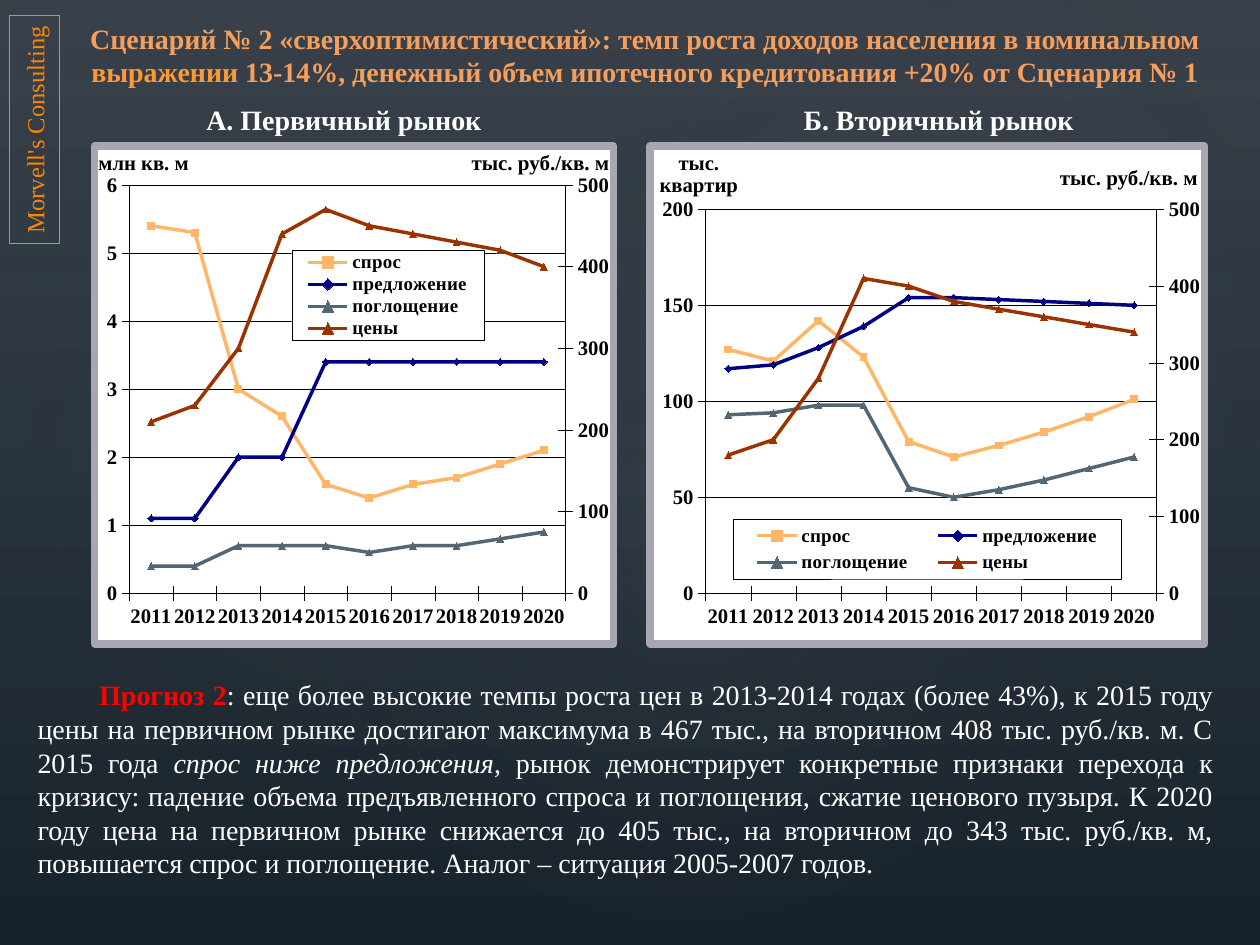
from copy import deepcopy

from pptx import Presentation
from pptx.chart.axis import ValueAxis
from pptx.chart.data import CategoryChartData
from pptx.dml.color import RGBColor
from pptx.enum.chart import XL_CHART_TYPE, XL_LEGEND_POSITION, XL_MARKER_STYLE, XL_TICK_MARK
from pptx.enum.shapes import MSO_SHAPE
from pptx.enum.text import MSO_ANCHOR, PP_ALIGN
from pptx.oxml import parse_xml
from pptx.oxml.ns import nsdecls, qn
from pptx.util import Inches, Pt

COLORS = {
    "top": "394650", "bottom": "17212A", "veil": "38363E", "dark": "283138", "glow": "A8A6B2",
    "title": "F69E5C", "accent": "FF9933", "brand": "FF8600", "red": "FF0000",
    "white": "FFFFFF", "black": "000000", "demand": "FFB666", "supply": "000080",
    "absorption": "536674", "prices": "993300", "price marker": "800000",
}
FONT = "Times New Roman"


def rgb(name):
    return RGBColor.from_string(COLORS[name])


def set_layout(element, position, plot=False):
    """Give a chart part a manual layout: x, y and, if present, width, height."""
    for old in element.findall(qn("c:layout")):
        element.remove(old)
    tags = ["xMode", "yMode"] + ["x", "y", "w", "h"][:len(position)]
    values = ["edge", "edge", *position]
    inner = '<c:layoutTarget val="inner"/>' if plot else ""
    inner += "".join(f'<c:{tag} val="{value}"/>' for tag, value in zip(tags, values))
    layout = parse_xml(f'<c:layout {nsdecls("c")}><c:manualLayout>{inner}</c:manualLayout></c:layout>')
    leading = element.xpath("c:tx | c:legendPos")
    element.insert(len(leading), layout)


deck = Presentation()
deck.slide_width, deck.slide_height = Inches(10), Inches(7.5)
page = deck.slides.add_slide(deck.slide_layouts[6])

# Background with a veil and three soft glows
backdrop = page.background.fill
backdrop.gradient()
backdrop.gradient_angle = 270
for stop, name in zip(backdrop.gradient_stops, ("top", "bottom")):
    stop.color.rgb = rgb(name)

down = '<a:lin ang="5400000" scaled="0"/>'
radial = '<a:path path="circle"><a:fillToRect l="50000" t="50000" r="50000" b="50000"/></a:path>'
layers = [
    (MSO_SHAPE.RECTANGLE, (0, 0, 10, 7.5), 0, ("veil", 0, 36), ("dark", 100, 10), down),
    (MSO_SHAPE.OVAL, (1.5, 1.14, 7.92, 6.24), 328.7, ("glow", 0, 7), ("dark", 58, 0), radial),
    (MSO_SHAPE.OVAL, (-0.3, 1.28, 6.06, 4.9), 294.3, ("glow", 0, 8), ("dark", 58, 0), radial),
    (MSO_SHAPE.OVAL, (3.58, 0.13, 7.09, 5.2), 328.7, ("glow", 0, 8), ("dark", 58, 0), radial),
]
for kind, place, angle, first, last, shade in layers:
    layer = page.shapes.add_shape(kind, *map(Inches, place))
    layer.rotation = angle
    layer.shadow.inherit = False
    layer.line.fill.background()
    stops = "".join(
        f'<a:gs pos="{at * 1000}"><a:srgbClr val="{COLORS[name]}"><a:alpha val="{alpha * 1000}"/>'
        f"</a:srgbClr></a:gs>" for name, at, alpha in (first, last))
    layer.fill.background()
    empty = layer._element.spPr.find(qn("a:noFill"))
    layer._element.spPr.replace(empty, parse_xml(
        f'<a:gradFill {nsdecls("a")} rotWithShape="1"><a:gsLst>{stops}</a:gsLst>{shade}</a:gradFill>'))

# Charts
years = [str(year) for year in range(2011, 2021)]
series_styles = [
    ("спрос", "demand", XL_MARKER_STYLE.SQUARE, "demand"),
    ("предложение", "supply", XL_MARKER_STYLE.DIAMOND, "supply"),
    ("поглощение", "absorption", XL_MARKER_STYLE.TRIANGLE, "absorption"),
    ("цены", "prices", XL_MARKER_STYLE.TRIANGLE, "price marker"),
]
markets = [
    dict(place=(0.72, 1.13, 4.18, 4.01), plot=(0.067, 0.078, 0.841, 0.821),
         legend=(0.38, 0.21, 0.37, 0.18), unit="млн кв. м", unit_at=(0, 0), top=6, step=1,
         values=[[5.4, 5.3, 3, 2.6, 1.6, 1.4, 1.6, 1.7, 1.9, 2.1],
                 [1.1, 1.1, 2, 2, 3.4, 3.4, 3.4, 3.4, 3.4, 3.4],
                 [0.4, 0.4, 0.7, 0.7, 0.7, 0.6, 0.7, 0.7, 0.8, 0.9],
                 [210, 230, 300, 440, 470, 450, 440, 430, 420, 400]]),
    dict(place=(5.13, 1.13, 4.46, 4.01), plot=(0.1, 0.127, 0.814, 0.772),
         legend=(0.15, 0.75, 0.7, 0.12), unit="тыс. квартир", unit_at=(0.01, 0), top=200, step=50,
         values=[[127, 121, 142, 123, 79, 71, 77, 84, 92, 101],
                 [117, 119, 128, 139, 154, 154, 153, 152, 151, 150],
                 [93, 94, 98, 98, 55, 50, 54, 59, 65, 71],
                 [180, 200, 280, 410, 400, 380, 370, 360, 350, 340]]),
]
box_format = ('<c:spPr {}><a:solidFill><a:srgbClr val="FFFFFF"/></a:solidFill><a:ln w="{}"><a:solidFill>'
              '<a:srgbClr val="{}"/></a:solidFill><a:round/></a:ln></c:spPr>')
for market in markets:
    data = CategoryChartData()
    data.categories = years
    for style, values in zip(series_styles, market["values"]):
        data.add_series(style[0], values)
    chart = page.shapes.add_chart(
        XL_CHART_TYPE.LINE_MARKERS, *map(Inches, market["place"]), data).chart
    chart.has_title = False
    chart.has_legend = True
    chart.legend.position = XL_LEGEND_POSITION.RIGHT
    chart.legend.include_in_layout = False
    for font, size in ((chart.font, 12), (chart.legend.font, 11)):
        for key, value in dict(name=FONT, size=Pt(size), bold=True).items():
            setattr(font, key, value)
        font.color.rgb = rgb("black")
    for series, (_, color, marker, marker_color) in zip(chart.plots[0].series, series_styles):
        series.smooth = False
        series.format.line.color.rgb = rgb(color)
        series.format.line.width = Pt(2)
        series.marker.style = marker
        series.marker.size = 4
        series.marker.format.fill.solid()
        series.marker.format.fill.fore_color.rgb = rgb(marker_color)
        series.marker.format.line.color.rgb = rgb(color)

    # Prices move to a second pair of axes
    main = chart.plots[0]._element
    prices = deepcopy(main)
    main.remove(main.findall(qn("c:ser"))[-1])
    for series in prices.findall(qn("c:ser"))[:-1]:
        prices.remove(series)
    main.addnext(prices)
    years_axis, left_axis = chart.category_axis, chart.value_axis
    hidden, right = deepcopy(years_axis._element), deepcopy(left_axis._element)
    left_axis._element.addnext(right)
    right.addnext(hidden)
    references = prices.findall(qn("c:axId"))
    for number, reference, own, other in zip(("5001", "5002"), references, (hidden, right), (right, hidden)):
        reference.set("val", number)
        own.find(qn("c:axId")).set("val", number)
        other.find(qn("c:crossAx")).set("val", number)
    hidden.find(qn("c:delete")).set("val", "1")
    right.find(qn("c:axPos")).set("val", "r")
    right.find(qn("c:crosses")).set("val", "max")

    right_axis = ValueAxis(right)
    right_axis.has_major_gridlines = False
    left_axis.major_gridlines.format.line.color.rgb = rgb("black")
    left_axis.major_gridlines.format.line.width = Pt(0.25)
    for axis in (years_axis, left_axis, right_axis):
        axis.major_tick_mark = XL_TICK_MARK.CROSS
        axis.format.line.color.rgb = rgb("black")
        axis.format.line.width = Pt(0.25)
    for axis, top, step in ((left_axis, market["top"], market["step"]), (right_axis, 500, 100)):
        axis.minimum_scale, axis.maximum_scale, axis.major_unit = 0, top, step
        axis.tick_labels.number_format = "0"
        axis.tick_labels.number_format_is_linked = False
    frame = left_axis.axis_title.text_frame
    frame.text = market["unit"]
    for key, value in dict(name=FONT, size=Pt(12), bold=True).items():
        setattr(frame.paragraphs[0].runs[0].font, key, value)
    frame._txBody.bodyPr.set("rot", "0")
    frame._txBody.bodyPr.set("vert", "horz")
    set_layout(left_axis.axis_title._element, market["unit_at"])

    legend = chart.legend._element
    set_layout(legend, market["legend"])
    set_layout(main.getparent(), market["plot"], plot=True)
    legend.find(qn("c:txPr")).addprevious(parse_xml(box_format.format(nsdecls("c", "a"), 3175, COLORS["black"])))
    chart._chartSpace.find(qn("c:chart")).addnext(
        parse_xml(box_format.format(nsdecls("c", "a"), Pt(4.5), COLORS["glow"])))

# Texts: place, anchor, alignment, first-line indent, size, spans of (text, colour, bold, italic)
texts = [
    ((0.59, 0.12, 9.06, 0.64), MSO_ANCHOR.TOP, PP_ALIGN.CENTER, 0, 16, [
        ("Сценарий № 2 «сверхоптимистический»: темп роста доходов населения в номинальном ", "title", True, False),
        ("выражении", "accent", True, False),
        (" 13-14%, денежный объем ипотечного кредитования +20% от Сценария № 1", "title", True, False)]),
    ((1.23, 0.76, 3, 0.37), MSO_ANCHOR.MIDDLE, PP_ALIGN.CENTER, 0, 16,
     [("А. Первичный рынок", "white", True, False)]),
    ((5.95, 0.76, 3, 0.37), MSO_ANCHOR.MIDDLE, PP_ALIGN.CENTER, 0, 16,
     [("Б. Вторичный рынок", "white", True, False)]),
    ((0.2, 5.32, 9.53, 1.72), MSO_ANCHOR.MIDDLE, PP_ALIGN.JUSTIFY, 0.49, 16, [
        ("Прогноз 2", "red", True, False),
        (": еще более высокие темпы роста цен в 2013-2014 годах (более 43%), к 2015 году цены на первичном "
         "рынке достигают максимума в 467 тыс., на вторичном 408 тыс. руб./кв. м. С 2015 года ",
         "white", False, False),
        ("спрос ниже предложения", "white", False, True),
        (", рынок демонстрирует конкретные признаки перехода к кризису: падение объема предъявленного спроса "
         "и поглощения, сжатие ценового пузыря. К 2020 году цена на первичном рынке снижается до 405 тыс., "
         "на вторичном до 343 тыс. руб./кв. м, повышается спрос и поглощение. Аналог – ситуация "
         "2005-2007 годов.", "white", False, False)]),
    ((-0.63, 0.83, 1.81, 0.4), MSO_ANCHOR.MIDDLE, PP_ALIGN.CENTER, 0, 14,
     [("Morvell's Consulting", "brand", False, False)]),
]
for left, top in ((3.54, 1.14), (8.21, 1.26)):
    texts.append(((left, top, 1.5, 0.3), MSO_ANCHOR.MIDDLE, PP_ALIGN.CENTER, 0, 12,
                  [("тыс. руб./кв. м", "black", True, False)]))
for place, anchor, alignment, indent, size, spans in texts:
    if spans[0][1] == "brand":
        box = page.shapes.add_shape(MSO_SHAPE.RECTANGLE, *map(Inches, place))
        box.shadow.inherit = False
        box.fill.background()
        box.line.color.rgb = rgb("brand")
        box.line.width = Pt(0.75)
        box.rotation = 270
    else:
        box = page.shapes.add_textbox(*map(Inches, place))
    box.text_frame.word_wrap = True
    if size < 16:
        box.text_frame.margin_left = box.text_frame.margin_right = 0
    box.text_frame.vertical_anchor = anchor
    para = box.text_frame.paragraphs[0]
    para.alignment = alignment
    if indent:
        para._p.get_or_add_pPr().set("indent", str(Inches(indent)))
    for text, color, bold, italic in spans:
        span = para.add_run()
        span.text = text
        for key, value in dict(name=FONT, size=Pt(size), bold=bold, italic=italic).items():
            setattr(span.font, key, value)
        span.font.color.rgb = rgb(color)

deck.save("out.pptx")
